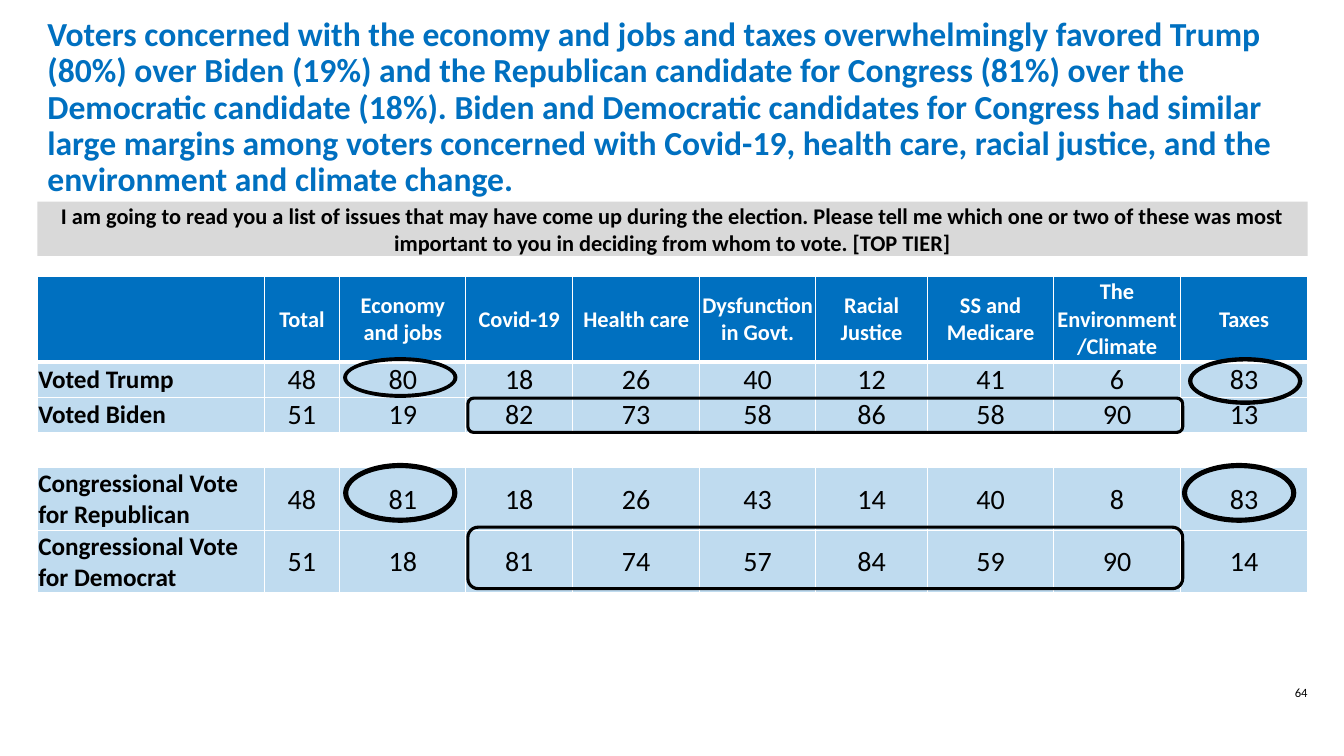
from dataclasses import dataclass
from lxml.etree import SubElement
from pptx import Presentation
from pptx.dml.color import RGBColor
from pptx.enum.shapes import MSO_SHAPE as SHAPE
from pptx.enum.text import MSO_ANCHOR as ANCHOR, MSO_AUTO_SIZE as AUTO, PP_ALIGN as ALIGN
from pptx.oxml.ns import qn
from pptx.util import Emu, Pt

PX_PER_INCH = 100
BLUE, PALE_BLUE, GREY, BLACK, WHITE = "0070C0", "BFDBEF", "D9D9D9", "000000", "FFFFFF"
TITLE = (
    "Voters concerned with the economy and jobs and taxes overwhelmingly favored Trump (80%) "
    "over Biden (19%) and the Republican candidate for Congress (81%) over the Democratic "
    "candidate (18%). Biden and Democratic candidates for Congress had similar large margins "
    "among voters concerned with Covid-19, health care, racial justice, and the environment "
    "and climate change."
)
QUESTION = (
    "I am going to read you a list of issues that may have come up during the election. "
    "Please tell me which one or two of these was most important to you in deciding from "
    "whom to vote. [TOP TIER]"
)


@dataclass(frozen=True)
class Row:
    height: int
    label: str = ""
    values: tuple = ("",) * 9
    fill: str | None = PALE_BLUE


@dataclass(frozen=True)
class Mark:
    kind: SHAPE
    x: int
    y: int
    w: int
    h: int


COLUMN_WIDTHS = (225, 75, 125, 106, 126, 115, 111, 125, 126, 126)
ROWS = (
    Row(85, "", ("Total", "Economy and jobs", "Covid-19", "Health care", "Dysfunction in Govt.",
                 "Racial Justice", "SS and Medicare", "The Environment/Climate", "Taxes"), BLUE),
    Row(35, "Voted Trump", (48, 80, 18, 26, 40, 12, 41, 6, 83)),
    Row(35, "Voted Biden", (51, 19, 82, 73, 58, 86, 58, 90, 13)),
    Row(35, fill=None),
    Row(62, "Congressional Vote for Republican", (48, 81, 18, 26, 43, 14, 40, 8, 83)),
    Row(62, "Congressional Vote for Democrat", (51, 18, 81, 74, 57, 84, 59, 90, 14)),
)
MARKS = (
    Mark(SHAPE.DONUT, 341, 355, 112, 39),
    Mark(SHAPE.DONUT, 341, 460, 112, 58),
    Mark(SHAPE.DONUT, 1179, 355, 112, 46),
    Mark(SHAPE.ROUNDED_RECTANGLE, 464, 395, 709, 34),
    Mark(SHAPE.ROUNDED_RECTANGLE, 464, 523, 709, 61),
    Mark(SHAPE.DONUT, 1173, 460, 112, 58),
)


def px(n: int) -> Emu:
    return Emu(n * 914400 // PX_PER_INCH)


def color(value: str) -> RGBColor:
    return RGBColor.from_string(value)


def write(tf, text: str, *, size: int, hex_color: str = BLACK, bold: bool = False,
          align: ALIGN = ALIGN.CENTER, spacing: float | None = None) -> None:
    p = tf.paragraphs[0]
    p.alignment = align
    p.line_spacing = spacing
    r = p.add_run()
    r.text = text
    r.font.name = "Calibri"
    r.font.size = Pt(size)
    r.font.bold = bold
    r.font.color.rgb = color(hex_color)


def add_title(slide) -> None:
    sp = slide.shapes.title
    sp.left, sp.top, sp.width, sp.height = px(37), px(35), px(1260), px(145)
    tf = sp.text_frame
    tf.auto_size = AUTO.NONE
    tf.vertical_anchor = ANCHOR.MIDDLE
    write(tf, TITLE, size=24, hex_color=BLUE, bold=True, align=ALIGN.LEFT, spacing=0.9)


def add_question(slide) -> None:
    sp = slide.shapes.add_shape(SHAPE.RECTANGLE, px(37), px(200), px(1260), px(54))
    sp.shadow.inherit = False
    sp.fill.solid()
    sp.fill.fore_color.rgb = color(GREY)
    sp.line.fill.background()
    tf = sp.text_frame
    tf.word_wrap = True
    tf.vertical_anchor = ANCHOR.MIDDLE
    write(tf, QUESTION, size=16, bold=True)


def add_borders(cell, bottom: float) -> None:
    tc_pr = cell._tc.get_or_add_tcPr()
    for side, width in (("L", 1), ("R", 1), ("T", 1), ("B", bottom)):
        ln = SubElement(tc_pr, qn(f"a:ln{side}"), w=str(Pt(width)))
        SubElement(SubElement(ln, qn("a:solidFill")), qn("a:srgbClr"), val=WHITE)


def fill_cell(cell, row: Row, col: int, text: str) -> None:
    header = row.fill == BLUE
    cell.margin_left = cell.margin_right = cell.margin_top = px(1)
    cell.margin_bottom = 0
    cell.vertical_anchor = ANCHOR.MIDDLE
    add_borders(cell, 3 if header else 1)
    if row.fill:
        cell.fill.solid()
        cell.fill.fore_color.rgb = color(row.fill)
    else:
        cell.fill.background()
    if text and header:
        write(cell.text_frame, text, size=16, hex_color=WHITE, bold=True)
    elif text and col == 0:
        write(cell.text_frame, text, size=18, bold=True, align=ALIGN.LEFT)
    elif text:
        write(cell.text_frame, text, size=20)


def add_results(slide) -> None:
    height = sum(row.height for row in ROWS)
    table = slide.shapes.add_table(len(ROWS), len(COLUMN_WIDTHS), px(37), px(274),
                                   px(sum(COLUMN_WIDTHS)), px(height)).table
    table.horz_banding = False
    for column, width in zip(table.columns, COLUMN_WIDTHS):
        column.width = px(width)
    for i, row in enumerate(ROWS):
        table.rows[i].height = px(row.height)
        for j, value in enumerate((row.label, *row.values)):
            fill_cell(table.cell(i, j), row, j, str(value))


def add_mark(slide, mark: Mark) -> None:
    sp = slide.shapes.add_shape(mark.kind, px(mark.x), px(mark.y), px(mark.w), px(mark.h))
    sp.shadow.inherit = False
    sp.line.color.rgb = color(BLACK)
    if mark.kind == SHAPE.DONUT:
        sp.adjustments[0] = 0.064
        sp.fill.solid()
        sp.fill.fore_color.rgb = color(BLACK)
        sp.line.width = Pt(1)
    else:
        sp.fill.background()
        sp.line.width = Pt(2.25)


def add_page_number(slide) -> None:
    tf = slide.shapes.add_textbox(px(1253), px(675), px(75), px(33)).text_frame
    tf.word_wrap = True
    write(tf, "64", size=9)


def main() -> None:
    prs = Presentation()
    prs.slide_width, prs.slide_height = px(1333), px(750)
    slide = prs.slides.add_slide(prs.slide_layouts[5])
    add_title(slide)
    add_question(slide)
    add_results(slide)
    for mark in MARKS:
        add_mark(slide, mark)
    add_page_number(slide)
    prs.save("out.pptx")


if __name__ == "__main__":
    main()
